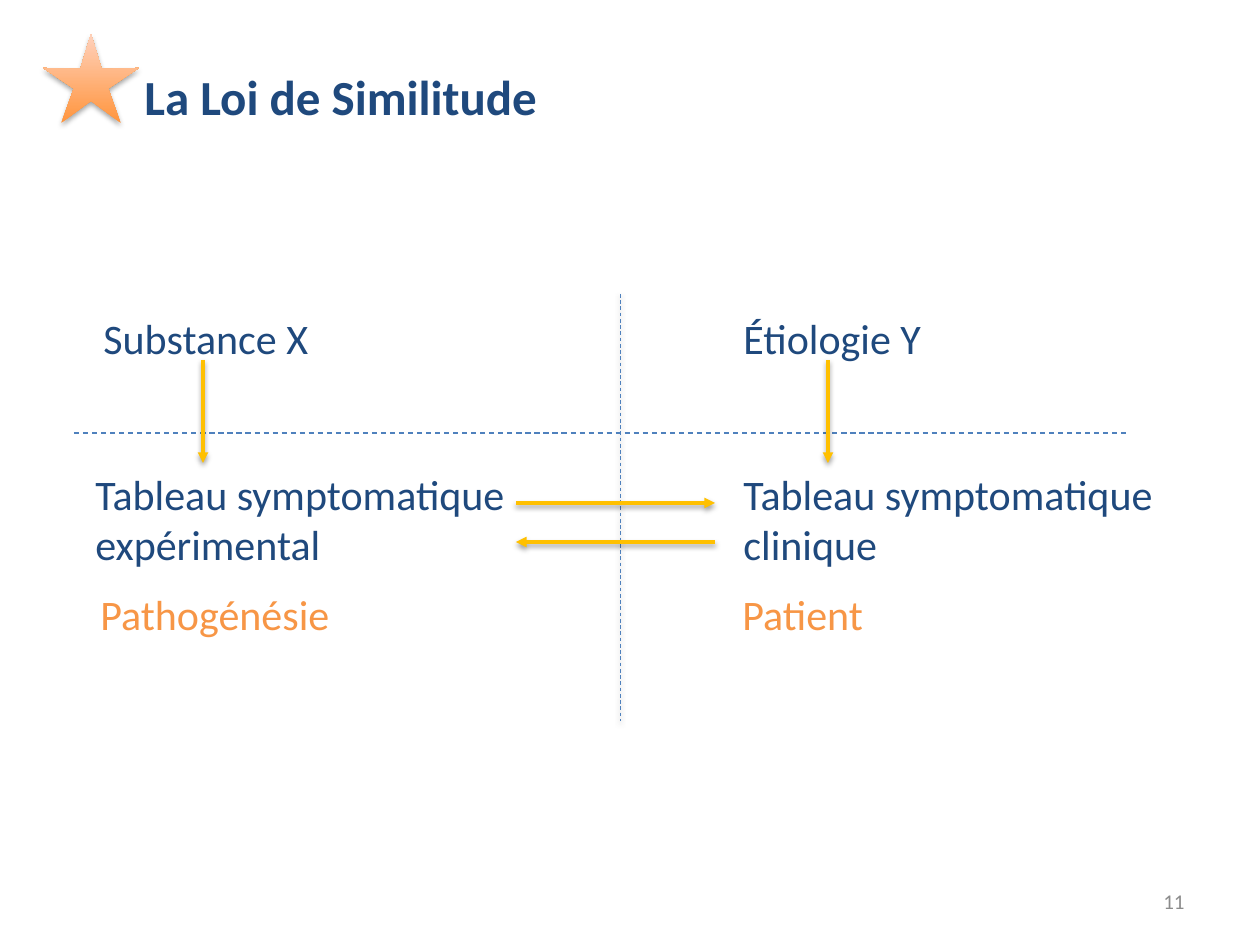
from lxml import etree
from pptx import Presentation
from pptx.dml.color import RGBColor
from pptx.enum.dml import MSO_LINE
from pptx.enum.shapes import MSO_CONNECTOR, MSO_SHAPE
from pptx.enum.text import MSO_ANCHOR, PP_ALIGN
from pptx.oxml.ns import qn
from pptx.util import Pt

PX = 914400 / 126
DASH = MSO_LINE.DASH
LINE = MSO_CONNECTOR.STRAIGHT
STAR = MSO_SHAPE.STAR_5_POINT
LEFT, RIGHT = PP_ALIGN.LEFT, PP_ALIGN.RIGHT
TOP, MID = MSO_ANCHOR.TOP, MSO_ANCHOR.MIDDLE
NAVY, BLUE, GOLD, CORAL, GREY = "1F497D", "4F81BD", "FFC000", "F79646", "8C8C8C"


def color(code):
    return RGBColor.from_string(code)


def shade(shape, alpha=0, dist=0):
    """Give the shape a soft drop shadow, or none when alpha is 0."""
    props = shape._element.spPr
    list_el = etree.SubElement(props, qn("a:effectLst"))
    if alpha:
        drop = etree.SubElement(list_el, qn("a:outerShdw"), blurRad=str(Pt(3.1)),
                                dist=str(Pt(dist)), dir="5400000", rotWithShape="0")
        tone = etree.SubElement(drop, qn("a:srgbClr"), val="000000")
        etree.SubElement(tone, qn("a:alpha"), val=str(alpha * 1000))


deck = Presentation()
deck.slide_width, deck.slide_height = round(1260 * PX), round(945 * PX)
slide = deck.slides.add_slide(deck.slide_layouts[6])
shapes = slide.shapes

# Dashed cross, then the gold arrows
lines = [
    ((620, 294, 620, 721), BLUE, 0.5, True, 38),
    ((74, 433, 1126, 433), BLUE, 0.75, True, 0),
    ((203, 360, 203, 463), GOLD, 2, False, 38),
    ((828, 360, 828, 463), GOLD, 2, False, 38),
    ((516, 503, 715, 503), GOLD, 2, False, 38),
    ((715, 542, 516, 542), GOLD, 2, False, 38),
]
for ends, tint, width, dashed, alpha in lines:
    link = shapes.add_connector(LINE, *[round(v * PX) for v in ends])
    link.line.color.rgb = color(tint)
    link.line.width = Pt(width)
    if dashed:
        link.line.dash_style = DASH
    else:
        etree.SubElement(link.line._get_or_add_ln(), qn("a:tailEnd"), type="triangle")
    shade(link, alpha, 1.6)

# Star beside the title
star = shapes.add_shape(STAR, *[round(v * PX) for v in (43, 34, 96, 89)])
star.adjustments[0] = 0.18
star.fill.gradient()
star.fill.gradient_angle = 90
for stop, (spot, tint) in zip(star.fill.gradient_stops, [(0, "FF953E"), (1, "FFD2BD")]):
    stop.position = spot
    stop.color.rgb = color(tint)
star.line.fill.background()
shade(star, 35, 1.8)

# Title, the two columns and the page number
base = {"size": Pt(24), "name": "Calibri", "bold": False}
head = {**base, "size": Pt(28), "bold": True}
foot = {**base, "size": Pt(12)}
texts = [
    ("La Loi de Similitude", (132, 60, 612, 72), NAVY, head, LEFT, TOP),
    ("Substance X", (91, 306, 411, 63), NAVY, base, LEFT, TOP),
    ("Étiologie Y", (731, 306, 286, 63), NAVY, base, LEFT, TOP),
    ("Tableau symptomatique expérimental", (83, 462, 467, 115), NAVY, base, LEFT, TOP),
    ("Tableau symptomatique clinique", (731, 462, 485, 115), NAVY, base, LEFT, TOP),
    ("Pathogénésie", (88, 582, 467, 63), CORAL, base, LEFT, TOP),
    ("Patient", (730, 582, 467, 63), CORAL, base, LEFT, TOP),
    ("11", (903, 876, 294, 50), GREY, foot, RIGHT, MID),
]
for words, spot, tint, style, align, anchor in texts:
    frame = shapes.add_textbox(*[round(v * PX) for v in spot]).text_frame
    frame.word_wrap = True
    frame.vertical_anchor = anchor
    para = frame.paragraphs[0]
    para.alignment = align
    run = para.add_run()
    run.text = words
    run.font.color.rgb = color(tint)
    for key, value in style.items():
        setattr(run.font, key, value)

deck.save("out.pptx")
